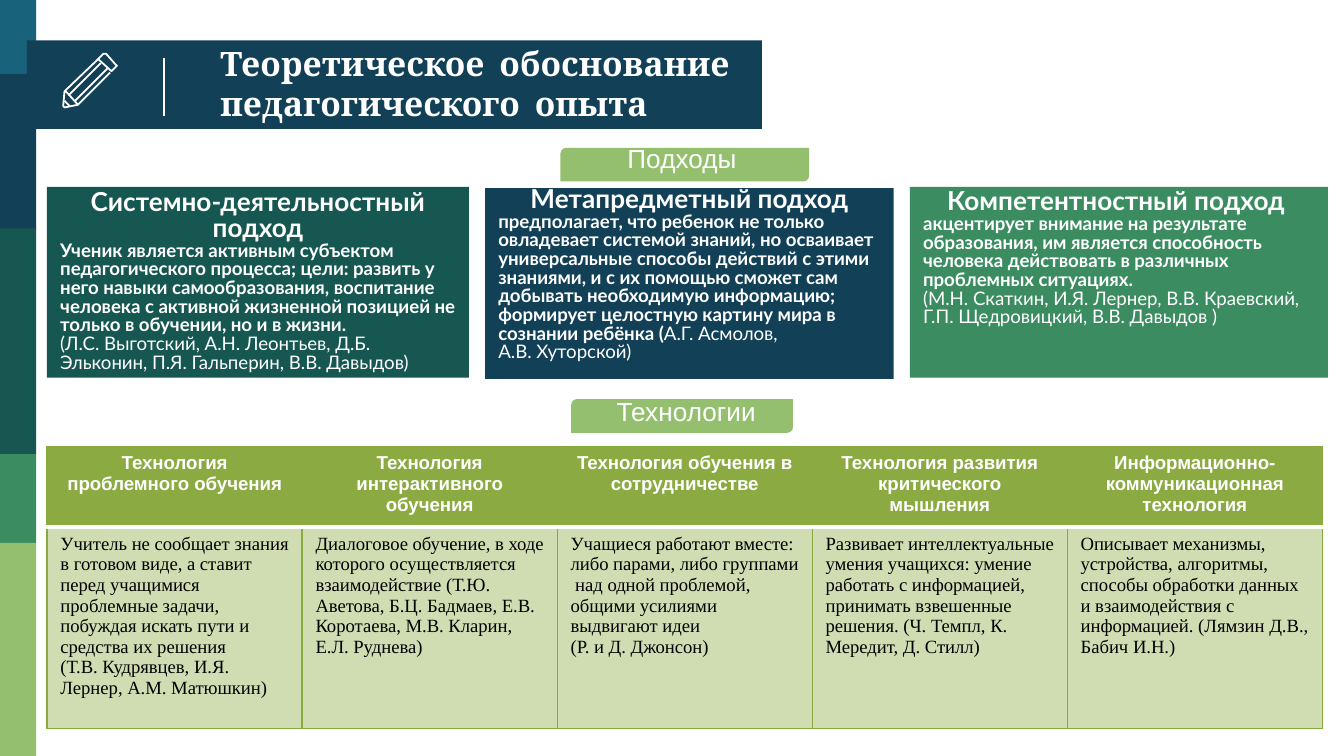
import pptx
import pptx.util
import pptx.dml.color
import pptx.enum.shapes
import pptx.enum.text
import pptx.oxml
import pptx.oxml.ns

Inches, Pt = pptx.util.Inches, pptx.util.Pt
RGBColor = pptx.dml.color.RGBColor
SHAPE = pptx.enum.shapes.MSO_SHAPE
ALIGN = pptx.enum.text.PP_ALIGN
ANCHOR = pptx.enum.text.MSO_ANCHOR

WHITE = RGBColor(0xFF, 0xFF, 0xFF)
BLACK = RGBColor(0, 0, 0)
BLUE = RGBColor(0x18, 0x63, 0x7B)
NAVY = RGBColor(0x12, 0x40, 0x57)
TEAL = RGBColor(0x16, 0x57, 0x51)
GREEN = RGBColor(0x3B, 0x8D, 0x61)
LIGHT = RGBColor(0x94, 0xBF, 0x6E)
OLIVE = RGBColor(0x8B, 0xAB, 0x42)
BORDER = RGBColor(0x89, 0xAA, 0x3E)
NBSP = chr(160)

TITLE = "Теоретическое  обоснование педагогического  опыта"
SIDEBAR = [(0, 0.58, BLUE), (0.55, 1.71, NAVY), (1.7, 3.38, TEAL),
           (3.38, 4.04, GREEN), (4.04, 5.63, LIGHT)]
LABELS = [
    ("Подходы", (4.17, 1.1, 1.85, 0.25), (4.57, 1.01, 1.02, 0.34)),
    ("Технологии", (4.25, 2.97, 1.65, 0.25), (4.49, 2.89, 1.42, 0.34)),
]
APPROACHES = [
    (TEAL, (0.35, 1.39, 3.14, 1.42), (0.35, 1.76, 3.14, 0.67), "Системно-деятельностный подход", [
        [("Ученик является активным субъектом педагогического процесса; цели: развить у него навыки "
          "самообразования, воспитание человека с активной жизненной позицией не только в обучении, "
          "но и в жизни.", True)],
        [("(Л.С. Выготский, А.Н. Леонтьев, Д.Б. Эльконин, П.Я. Гальперин, В.В. Давыдов)", False)]]),
    (GREEN, (6.77, 1.39, 3.11, 1.42), (6.77, 1.59, 3.07, 0.67), "Компетентностный подход", [
        [("акцентирует внимание на результате образования, им является способность человека "
          "действовать в различных проблемных ситуациях.", True)],
        [("(М.Н. Скаткин, И.Я. Лернер, В.В. Краевский, Г.П. Щедровицкий, В.В. Давыдов )", False)]]),
    (NAVY, (3.61, 1.4, 3.04, 1.42), (3.61, 1.52, 3.04, 1.05), "Метапредметный подход", [
        [("предполагает, что ребенок не только овладевает системой знаний, но осваивает универсальные "
          "способы действий с этими знаниями, и с их помощью сможет сам добывать необходимую "
          "информацию; формирует целостную картину мира в сознании ребёнка (", True),
         (f"А.Г. Асмолов, А.В.{NBSP}Хуторской)", False)]]),
]
TECHNOLOGIES = [
    ("Технология проблемного обучения",
     "Учитель не сообщает знания в готовом виде, а ставит перед учащимися проблемные задачи, "
     "побуждая искать пути и средства их решения\n"
     f"(Т.В.{NBSP}Кудрявцев, И.Я. Лернер, А.М.{NBSP}Матюшкин)"),
    ("Технология интерактивного обучения",
     "Диалоговое обучение, в ходе которого осуществляется взаимодействие (Т.Ю. Аветова, "
     "Б.Ц. Бадмаев, Е.В. Коротаева, М.В. Кларин, Е.Л. Руднева)"),
    ("Технология обучения в сотрудничестве",
     "Учащиеся работают вместе: либо парами, либо группами  над одной проблемой, общими усилиями "
     "выдвигают идеи\n(Р. и Д. Джонсон)"),
    ("Технология развития критического мышления",
     "Развивает интеллектуальные умения учащихся: умение работать с информацией, принимать "
     "взвешенные решения. (Ч. Темпл, К. Мередит, Д. Стилл)"),
    ("Информационно-коммуникационная технология",
     "Описывает механизмы, устройства, алгоритмы, способы обработки данных и взаимодействия с "
     "информацией. (Лямзин Д.В., Бабич И.Н.)"),
]
PENCIL = [
    ([(73, 44), (77, 40), (79, 40), (86, 48), (87, 49), (83, 53)], True),
    ([(80, 51), (56, 75)], False),
    ([(73, 44), (48, 68), (47, 79), (48, 80), (58, 78), (82, 54)], False),
    ([(51, 71), (75, 47)], False),
    ([(52, 79), (48, 75)], False),
    ([(49, 69), (49, 68), (58, 78)], False),
]


def add_block(shapes, box, color, kind=SHAPE.RECTANGLE):
    sp = shapes.add_shape(kind, *map(Inches, box))
    sp.shadow.inherit = False
    sp.fill.solid()
    sp.fill.fore_color.rgb = color
    sp.line.fill.background()


def style(r, size, font, color=WHITE, bold=False):
    r.font.size = Pt(size)
    r.font.name = font
    r.font.color.rgb = color
    r.font.bold = bold


def add_label(shapes, text, box, text_box):
    add_block(shapes, box, LIGHT, SHAPE.ROUND_2_DIAG_RECTANGLE)
    tf = shapes.add_textbox(*map(Inches, text_box)).text_frame
    tf.word_wrap = True
    tf.text = text
    style(tf.paragraphs[0].runs[0], 14, "Arial")


def add_approach(shapes, text_box, heading, body):
    tf = shapes.add_textbox(*map(Inches, text_box)).text_frame
    tf.word_wrap = True
    tf.vertical_anchor = ANCHOR.MIDDLE
    tf.text = heading
    tf.paragraphs[0].alignment = ALIGN.CENTER
    style(tf.paragraphs[0].runs[0], 14, "Lato", bold=True)
    for parts in body:
        p = tf.add_paragraph()
        for text, bold in parts:
            r = p.add_run()
            r.text = text
            style(r, 10, "Lato", bold=bold)
    for p in tf.paragraphs:
        p.line_spacing = 0.83


def set_border(cell, side, color, width):
    cell._tc.get_or_add_tcPr().append(pptx.oxml.parse_xml(
        f'<a:{side} xmlns:a="http://schemas.openxmlformats.org/drawingml/2006/main" w="{Pt(width)}">'
        f'<a:solidFill><a:srgbClr val="{color}"/></a:solidFill></a:{side}>'))


def fill_cell(cell, text, header):
    inner_side = "lnB" if header else "lnT"
    for side in ("lnL", "lnR", "lnT", "lnB"):
        set_border(cell, side, *((WHITE, 2) if side == inner_side else (BORDER, 0.75)))
    cell.fill.solid()
    cell.fill.fore_color.rgb = OLIVE
    if not header:
        clr = cell._tc.tcPr.find(pptx.oxml.ns.qn("a:solidFill"))[0]
        clr.append(clr.makeelement(pptx.oxml.ns.qn("a:alpha"), {"val": "40000"}))
    cell.text_frame.text = text
    for p in cell.text_frame.paragraphs:
        p.alignment = ALIGN.CENTER if header else ALIGN.LEFT
        for r in p.runs:
            if header:
                style(r, 10, "Arial", bold=True)
            else:
                style(r, 10, "Times New Roman", BLACK)


def add_title(slide):
    title = slide.shapes.title
    slide.shapes._spTree.append(title._element)
    title.left, title.top, title.width, title.height = map(Inches, (1.54, 0.06, 4.49, 1.12))
    tf = title.text_frame
    tf.text = TITLE
    tf.word_wrap = True
    tf.auto_size = pptx.enum.text.MSO_AUTO_SIZE.NONE
    tf.vertical_anchor = ANCHOR.MIDDLE
    tf.margin_left = tf.margin_right = tf.margin_top = tf.margin_bottom = Inches(0.1)
    tf.paragraphs[0].alignment = ALIGN.LEFT
    style(tf.paragraphs[0].runs[0], 18, "Cambria", bold=True)


def add_icon(shapes):
    for points, closed in PENCIL:
        fb = shapes.build_freeform(*points[0], scale=Inches(0.01))
        fb.add_line_segments(points[1:], close=closed)
        sp = fb.convert_to_shape()
        sp.shadow.inherit = False
        sp.fill.background()
        sp.line.color.rgb = WHITE
        sp.line.width = Pt(0.96)
    line = shapes.add_connector(pptx.enum.shapes.MSO_CONNECTOR.STRAIGHT,
                                *map(Inches, (1.22, 0.43, 1.22, 0.86)))
    line.line.color.rgb = WHITE
    line.line.width = Pt(0.75)
    sp_pr = line._element.spPr
    sp_pr.append(sp_pr.makeelement(pptx.oxml.ns.qn("a:effectLst"), {}))


def main():
    prs = pptx.Presentation()
    prs.slide_width = Inches(10)
    prs.slide_height = prs.slide_width * 9 // 16
    slide = prs.slides.add_slide(prs.slide_layouts[5])
    shapes = slide.shapes
    for top, bottom, color in SIDEBAR:
        add_block(shapes, (0, top, 0.27, bottom - top), color)
    add_block(shapes, (0.2, 0.3, 5.47, 0.66), NAVY)
    add_title(slide)
    add_icon(shapes)
    add_label(shapes, *LABELS[0])
    for color, box, *_ in APPROACHES:
        add_block(shapes, box, color)
    for _, _, *content in APPROACHES:
        add_approach(shapes, *content)
    add_label(shapes, *LABELS[1])
    table = shapes.add_table(2, len(TECHNOLOGIES), *map(Inches, (0.35, 3.32, 9.49, 2.1))).table
    table.rows[0].height, table.rows[1].height = Inches(0.6), Inches(1.5)
    for col, texts in enumerate(TECHNOLOGIES):
        for row, text in enumerate(texts):
            fill_cell(table.cell(row, col), text, row == 0)
    prs.save("out.pptx")


if __name__ == "__main__":
    main()
